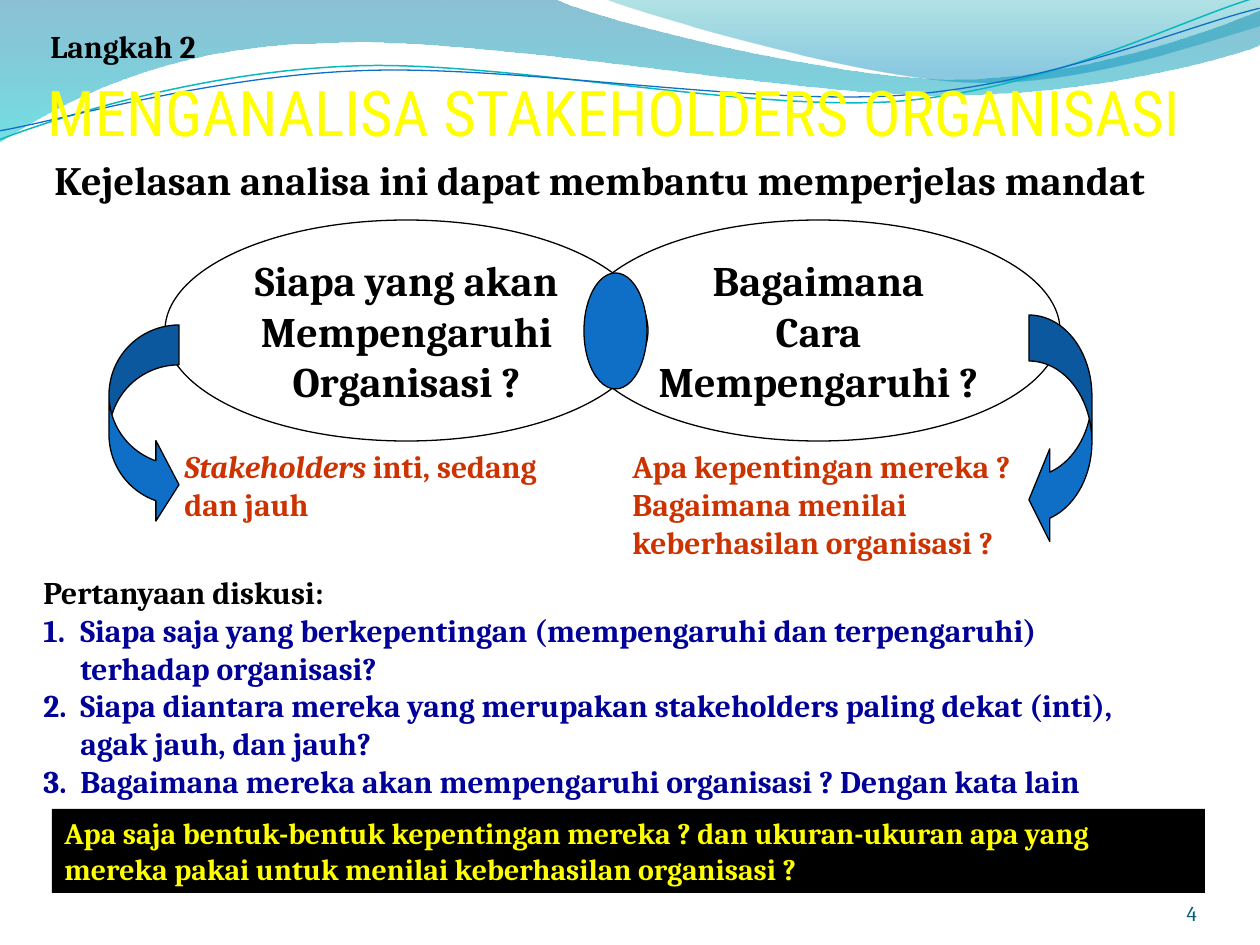
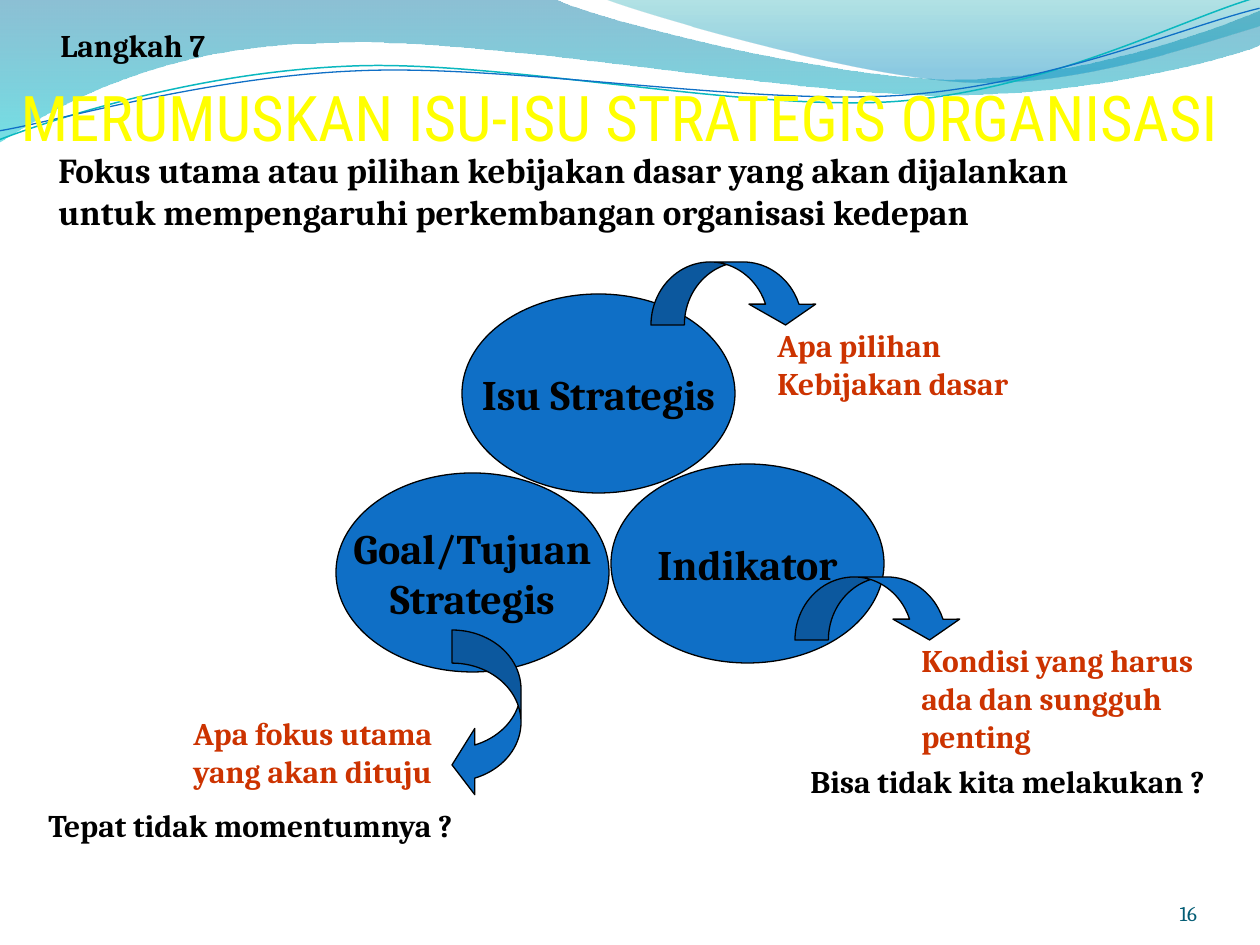
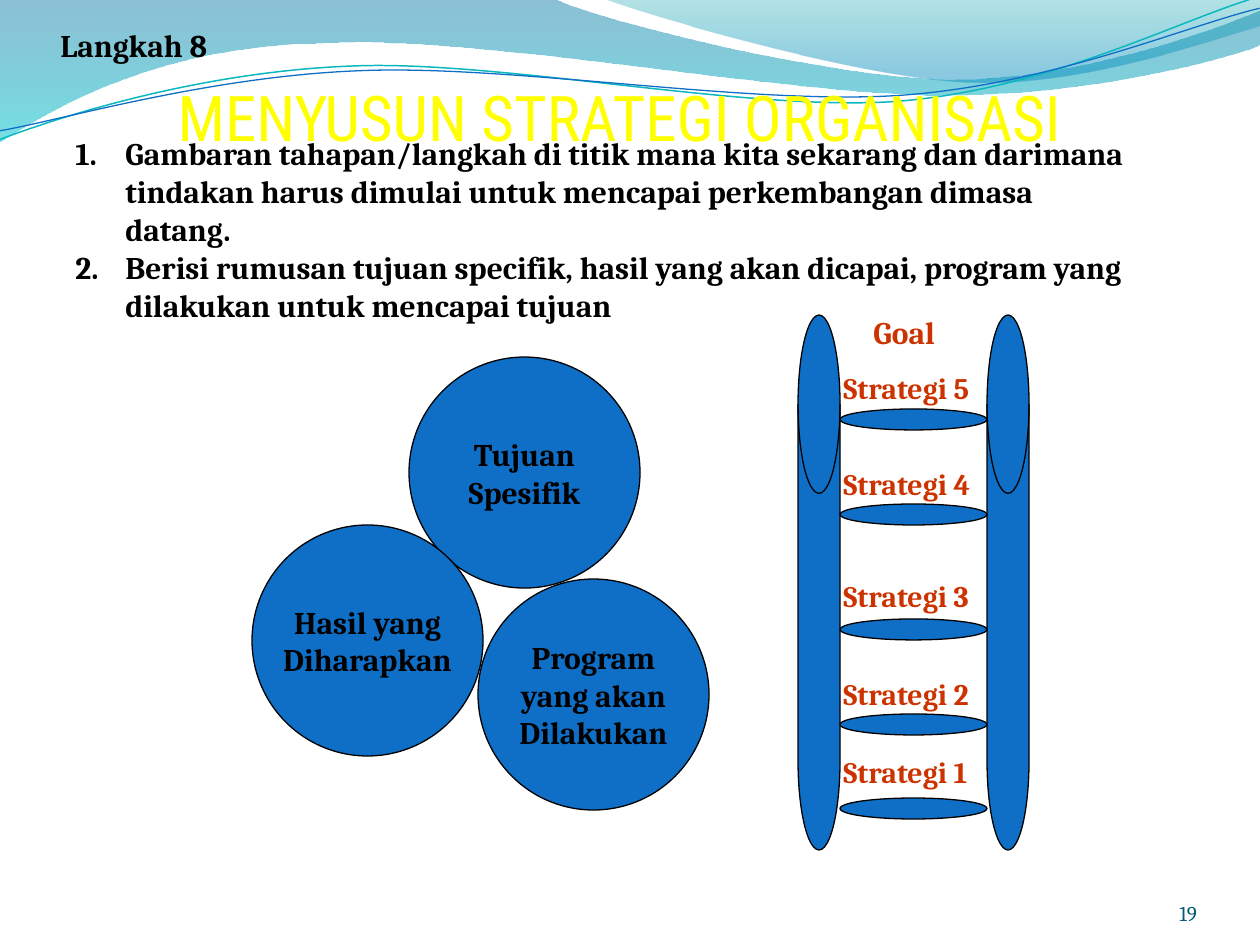
from dataclasses import dataclass
from itertools import chain
from typing import Optional

from lxml.etree import SubElement
from pptx import Presentation
from pptx.dml.color import RGBColor
from pptx.enum.shapes import MSO_SHAPE
from pptx.enum.text import MSO_ANCHOR, MSO_AUTO_SIZE, PP_ALIGN
from pptx.oxml import parse_xml
from pptx.oxml.ns import nsdecls, qn
from pptx.util import Emu, Pt

PX = 914400 / 126  # EMU in one px
SERIF, CONDENSED = "Cambria", "Roboto Condensed"
COLORS = {
    "black": "000000", "white": "FFFFFF", "blue": "0F6FC6", "teal": "0AB8BF",
    "red": "CC3300", "navy": "000099", "yellow": "FFFF00", "orange": "FF9933",
    "number": "045D75", "deep": "0074A1", "aqua": "00C6CF",
    "sea": "00A1A9", "sky": "008BBF",
}
TOP, MIDDLE, BOTTOM = MSO_ANCHOR.TOP, MSO_ANCHOR.MIDDLE, MSO_ANCHOR.BOTTOM
LEFT, CENTER, RIGHT = PP_ALIGN.LEFT, PP_ALIGN.CENTER, PP_ALIGN.RIGHT


def emu(px: float) -> Emu:
    return Emu(round(px * PX))


def rgb(name: str) -> RGBColor:
    return RGBColor.from_string(COLORS[name])


@dataclass(frozen=True)
class Box:
    left: int
    top: int
    width: int
    height: int

    def lengths(self) -> tuple:
        return tuple(emu(n) for n in (self.left, self.top, self.width, self.height))


@dataclass(frozen=True)
class Span:
    text: str
    italic: bool = False


@dataclass(frozen=True)
class Para:
    spans: tuple
    color: Optional[str] = None
    indent: int = 0  # hanging indent
    number: int = 0  # automatic number, 0 for none
    tab: bool = False


@dataclass(frozen=True)
class Style:
    size: int = 18
    color: str = "black"
    bold: bool = True
    font: str = SERIF
    align: PP_ALIGN = LEFT
    anchor: MSO_ANCHOR = TOP
    wrap: bool = False
    grow: bool = True
    inset: bool = True


@dataclass(frozen=True)
class Wave:
    start: tuple
    segments: tuple  # one point is a line, three points are a curve
    stops: tuple = ()  # position, colour, opacity
    line: str = ""
    weight: float = 0
    rotation: float = 0


PLAIN = Style()
WRAPPED = Style(wrap=True)
WRAPPED_NOTE = Style(color="red", wrap=True)
NOTE = Style(color="red")
RUNG = Style(17, "red")
IN_SHAPE = Style(24, align=CENTER, anchor=MIDDLE, grow=False)
IN_CIRCLE = Style(18, align=CENTER, anchor=MIDDLE, grow=False)
TITLE = Style(36, "yellow", False, CONDENSED, CENTER, grow=False)
NUMBER = Style(12, "number", False, align=RIGHT, anchor=BOTTOM,
               wrap=True, grow=False, inset=False)

WAVES = (
    Wave((0, 0), (
        ((554, -1),),
        ((600, 21), (837, 79), (955, 79)),
        ((1075, 79), (1207, 33), (1260, 11)),
        ((1261, 45),),
        ((1239, 55), (1096, 96), (940, 95)),
        ((784, 95), (481, 35), (324, 43)),
        ((163, 45), (58, 105), (-1, 142)),
    ), ((0, "deep", 45), (1, "aqua", 55))),
    Wave((604, -1), (
        ((641, 14), (859, 78), (969, 82)),
        ((1079, 87), (1211, 40), (1260, 26)),
        ((1260, 0),),
    ), ((0, "sea", 30), (0.8, "sky", 45))),
    Wave((-3, 110), (
        ((58, 90), (199, 52), (350, 53)),
        ((499, 53), (745, 118), (896, 114)),
        ((1049, 109), (1184, 45), (1260, 27)),
    ), line="teal", weight=0.85, rotation=357.3),
    Wave((-2, 101), (
        ((57, 94), (207, 57), (357, 58)),
        ((509, 58), (750, 112), (902, 108)),
        ((1052, 104), (1188, 52), (1262, 38)),
    ), line="blue", weight=0.75, rotation=357.3),
)


def lines(*texts: str) -> tuple:
    return tuple(Para((Span(text),)) for text in texts)


def bend(shape, segments: tuple) -> None:
    """Turn each run of three straight steps into one cubic curve."""
    steps = iter(shape.element.xpath(".//a:lnTo"))
    for segment in segments:
        group = [next(steps) for _ in segment]
        if len(group) == 3:
            group[0].tag = qn("a:cubicBezTo")
            for step in group[1:]:
                group[0].append(step[0])
                step.getparent().remove(step)


def draw_wave(page, wave: Wave):
    points = [(emu(x), emu(y)) for x, y in chain([wave.start], *wave.segments)]
    builder = page.shapes.build_freeform(*points[0], scale=1.0)
    builder.add_line_segments(points[1:], close=bool(wave.stops))
    shape = builder.convert_to_shape()
    bend(shape, wave.segments)
    shape.shadow.inherit = False
    shape.rotation = wave.rotation
    if wave.line:
        shape.fill.background()
        shape.line.color.rgb = rgb(wave.line)
        shape.line.width = Pt(wave.weight)
        return shape
    shape.line.fill.background()
    shape.fill.gradient()
    shape.fill.gradient_angle = 270
    for stop, (position, color, _) in zip(shape.fill.gradient_stops, wave.stops):
        stop.position = position
        stop.color.rgb = rgb(color)
    for color, (_, _, opacity) in zip(shape.element.xpath(".//a:gs/a:srgbClr"), wave.stops):
        SubElement(color, qn("a:alpha"), val=str(opacity * 1000))
    return shape


def move_waves_to_master(deck, page) -> None:
    """Draw the waves once and hand them to the slide master."""
    tree = deck.slide_master.element.cSld.spTree
    for identifier, wave in enumerate(WAVES, start=101):
        element = draw_wave(page, wave).element
        element.xpath(".//p:cNvPr")[0].set("id", str(identifier))
        tree.append(element)


def format_para(para, source: Para) -> None:
    """Set the hanging indent, number and tab stop."""
    if not source.indent:
        return
    properties = para._p.get_or_add_pPr()
    properties.set("marL", str(emu(source.indent)))
    properties.set("indent", str(-emu(source.indent)))
    if source.number:
        SubElement(properties, qn("a:buFont"), typeface="+mj-lt")
        SubElement(properties, qn("a:buAutoNum"), type="arabicPeriod",
                   startAt=str(source.number))
    if source.tab:
        tabs = SubElement(properties, qn("a:tabLst"))
        SubElement(tabs, qn("a:tab"), pos=str(emu(source.indent)), algn="l")


def write(shape, paras: tuple, style: Style) -> None:
    frame = shape.text_frame
    frame.word_wrap = style.wrap
    frame.vertical_anchor = style.anchor
    frame.auto_size = MSO_AUTO_SIZE.SHAPE_TO_FIT_TEXT if style.grow else MSO_AUTO_SIZE.NONE
    if not style.inset:
        frame.margin_left = frame.margin_right = frame.margin_top = frame.margin_bottom = 0
    for index, source in enumerate(paras):
        para = frame.add_paragraph() if index else frame.paragraphs[0]
        para.alignment = style.align
        format_para(para, source)
        for span in source.spans:
            run = para.add_run()
            run.text = span.text
            run.font.name = style.font
            run.font.size = Pt(style.size)
            run.font.bold = style.bold
            run.font.italic = span.italic
            run.font.color.rgb = rgb(source.color or style.color)


def add_text(page, box: Box, paras: tuple, style: Style = PLAIN):
    shape = page.shapes.add_textbox(*box.lengths())
    write(shape, paras, style)
    return shape


def add_figure(page, kind: MSO_SHAPE, box: Box, paras: tuple = (), style: Style = IN_SHAPE,
               fill: str = "blue", outlined: bool = True, adjust: tuple = ()) -> None:
    shape = page.shapes.add_shape(kind, *box.lengths())
    shape.shadow.inherit = False
    shape.fill.solid()
    shape.fill.fore_color.rgb = rgb(fill)
    if outlined:
        shape.line.color.rgb = rgb("black")
        shape.line.width = Pt(0.75)
    else:
        shape.line.fill.background()
    for index, value in enumerate(adjust):
        shape.adjustments[index] = value
    if paras:
        write(shape, paras, style)


def add_title(page, box: Box, text: str) -> None:
    """Yellow to orange lettering with a navy outline."""
    shape = add_text(page, box, lines(text), TITLE)
    properties = shape.text_frame.paragraphs[0].runs[0].font._element
    properties.remove(properties.find(qn("a:solidFill")))
    space = nsdecls("a")
    properties.insert(0, parse_xml(
        f'<a:gradFill {space} rotWithShape="1"><a:gsLst>'
        f'<a:gs pos="0"><a:srgbClr val="{COLORS["yellow"]}"/></a:gs>'
        f'<a:gs pos="100000"><a:srgbClr val="{COLORS["orange"]}"/></a:gs></a:gsLst>'
        '<a:path path="rect"><a:fillToRect l="50000" t="50000" r="50000" b="50000"/>'
        '</a:path></a:gradFill>'))
    properties.insert(0, parse_xml(
        f'<a:ln {space} w="{Pt(0.75)}"><a:solidFill>'
        f'<a:srgbClr val="{COLORS["navy"]}"/></a:solidFill></a:ln>'))


def new_page(deck, step: int, title: str, number: int,
             step_box: Box = Box(48, 20, 181, 50), title_box: Box = Box(63, 72, 1113, 53)):
    """Start a page with its number, step label and title."""
    page = deck.slides.add_slide(deck.slide_layouts[6])
    if len(deck.slides) == 1:
        move_waves_to_master(deck, page)
    add_text(page, Box(1092, 876, 105, 50), lines(str(number)), NUMBER)
    add_text(page, step_box, lines(f"Langkah {step}"))
    add_title(page, title_box, title)
    return page


def stakeholders(deck) -> None:
    page = new_page(deck, 2, "MENGANALISA STAKEHOLDERS ORGANISASI", 4,
                    Box(38, 21, 181, 50), Box(52, 67, 1124, 53))
    add_text(page, Box(42, 149, 1173, 60),
             lines("Kejelasan analisa ini dapat membantu memperjelas mandat"),
             Style(23, anchor=MIDDLE))

    # Discussion questions
    questions = (
        ("Siapa saja yang berkepentingan (mempengaruhi dan terpengaruhi) "
         "terhadap organisasi?", 1),
        ("2.\tSiapa diantara mereka yang merupakan stakeholders paling dekat (inti), "
         "agak jauh, dan jauh?", 0),
        ("Bagaimana mereka akan mempengaruhi organisasi ? Dengan kata lain", 3),
    )
    add_text(page, Box(31, 567, 1124, 239),
             (Para((Span("Pertanyaan diskusi:"),), indent=37),
              *(Para((Span(text),), "navy", 37, number) for text, number in questions)),
             Style(anchor=MIDDLE, wrap=True))
    add_text(page, Box(620, 441, 440, 126),
             lines("Apa kepentingan mereka ?", "Bagaimana menilai", "keberhasilan organisasi ?"),
             WRAPPED_NOTE)
    add_figure(page, MSO_SHAPE.RECTANGLE, Box(52, 809, 1153, 84),
               lines("Apa saja bentuk-bentuk kepentingan mereka ? dan ukuran-ukuran apa yang "
                     "mereka pakai untuk menilai keberhasilan organisasi ?"),
               Style(17, "yellow", wrap=True), "black", False)

    # Overlapping questions
    for left, texts in ((577, ("Bagaimana", "Cara", "Mempengaruhi ?")),
                        (165, ("Siapa yang akan", "Mempengaruhi", "Organisasi ?"))):
        add_figure(page, MSO_SHAPE.OVAL, Box(left, 220, 483, 221), lines(*texts), fill="white")
    add_figure(page, MSO_SHAPE.OVAL, Box(584, 273, 63, 116))

    # Stakeholder answer and the arrows
    add_text(page, Box(172, 441, 381, 88),
             (Para((Span("Stakeholders", True), Span(" inti, sedang dan jauh"))),),
             WRAPPED_NOTE)
    add_figure(page, MSO_SHAPE.CURVED_RIGHT_ARROW, Box(109, 325, 70, 200),
               adjust=(0.57, 1.15, 0.33))
    add_figure(page, MSO_SHAPE.CURVED_LEFT_ARROW, Box(1029, 315, 63, 231),
               adjust=(0.73, 1.47, 0.33))


def issues(deck) -> None:
    page = new_page(deck, 7, "MERUMUSKAN ISU-ISU STRATEGIS ORGANISASI", 16)
    add_text(page, Box(46, 142, 1137, 97),
             lines("Fokus utama atau pilihan kebijakan dasar yang akan dijalankan "
                   "untuk mempengaruhi perkembangan organisasi kedepan"),
             Style(20, wrap=True))

    # Three linked themes
    for left, top, texts in ((462, 294, ("Isu Strategis",)),
                             (336, 473, ("Goal/Tujuan", "Strategis")),
                             (611, 464, ("Indikator",))):
        add_figure(page, MSO_SHAPE.OVAL, Box(left, top, 273, 199), lines(*texts))
    add_text(page, Box(765, 320, 267, 88), lines("Apa pilihan", "Kebijakan dasar"), NOTE)

    # Arrows
    for left, top in ((651, 262), (795, 577)):
        add_figure(page, MSO_SHAPE.CURVED_DOWN_ARROW, Box(left, top, 168, 63),
                   adjust=(0.53, 1.06, 0.33))
    add_figure(page, MSO_SHAPE.CURVED_LEFT_ARROW, Box(452, 630, 69, 168),
               adjust=(0.48, 0.96, 0.33))

    # Notes and closing questions
    for box, texts, style in (
        (Box(909, 635, 318, 126), ("Kondisi yang harus", "ada dan sungguh", "penting"), NOTE),
        (Box(798, 756, 437, 50), ("Bisa tidak kita melakukan ?",), PLAIN),
        (Box(181, 708, 280, 88), ("Apa fokus utama", "yang akan dituju"), NOTE),
        (Box(36, 800, 452, 50), ("Tepat tidak momentumnya ?",), PLAIN),
    ):
        add_text(page, box, lines(*texts), style)


def strategy(deck) -> None:
    page = new_page(deck, 8, "MENYUSUN STRATEGI ORGANISASI", 19)
    points = (
        "1.\tGambaran tahapan/langkah di titik mana kita sekarang dan darimana tindakan "
        "harus dimulai untuk mencapai perkembangan dimasa datang.",
        "2.\tBerisi rumusan tujuan specifik, hasil yang akan dicapai, program yang "
        "dilakukan untuk mencapai tujuan",
    )
    add_text(page, Box(63, 128, 1084, 202),
             tuple(Para((Span(text),), indent=50, tab=True) for text in points),
             Style(anchor=MIDDLE, wrap=True))

    # Parts of a strategy
    for left, top, texts in ((409, 357, ("Tujuan", "Spesifik")),
                             (252, 525, ("Hasil yang", "Diharapkan")),
                             (478, 579, ("Program", "yang akan", "Dilakukan"))):
        add_figure(page, MSO_SHAPE.OVAL, Box(left, top, 231, 231), lines(*texts), IN_CIRCLE)

    # Ladder to the goal
    for left in (798, 987):
        add_figure(page, MSO_SHAPE.FLOWCHART_MAGNETIC_DISK, Box(left, 315, 42, 535))
    add_text(page, Box(861, 307, 96, 50), lines("Goal"), NOTE)
    rungs = ((798, 748), (714, 670), (619, 572), (504, 460), (409, 364))
    for step, (rung_top, label_top) in enumerate(rungs, start=1):
        add_figure(page, MSO_SHAPE.OVAL, Box(840, rung_top, 147, 21))
        add_text(page, Box(831, label_top, 161, 48), lines(f"Strategi {step}"), RUNG)


def main() -> None:
    deck = Presentation()
    deck.slide_width, deck.slide_height = emu(1260), emu(945)
    stakeholders(deck)
    issues(deck)
    strategy(deck)
    deck.save("out.pptx")


if __name__ == "__main__":
    main()
